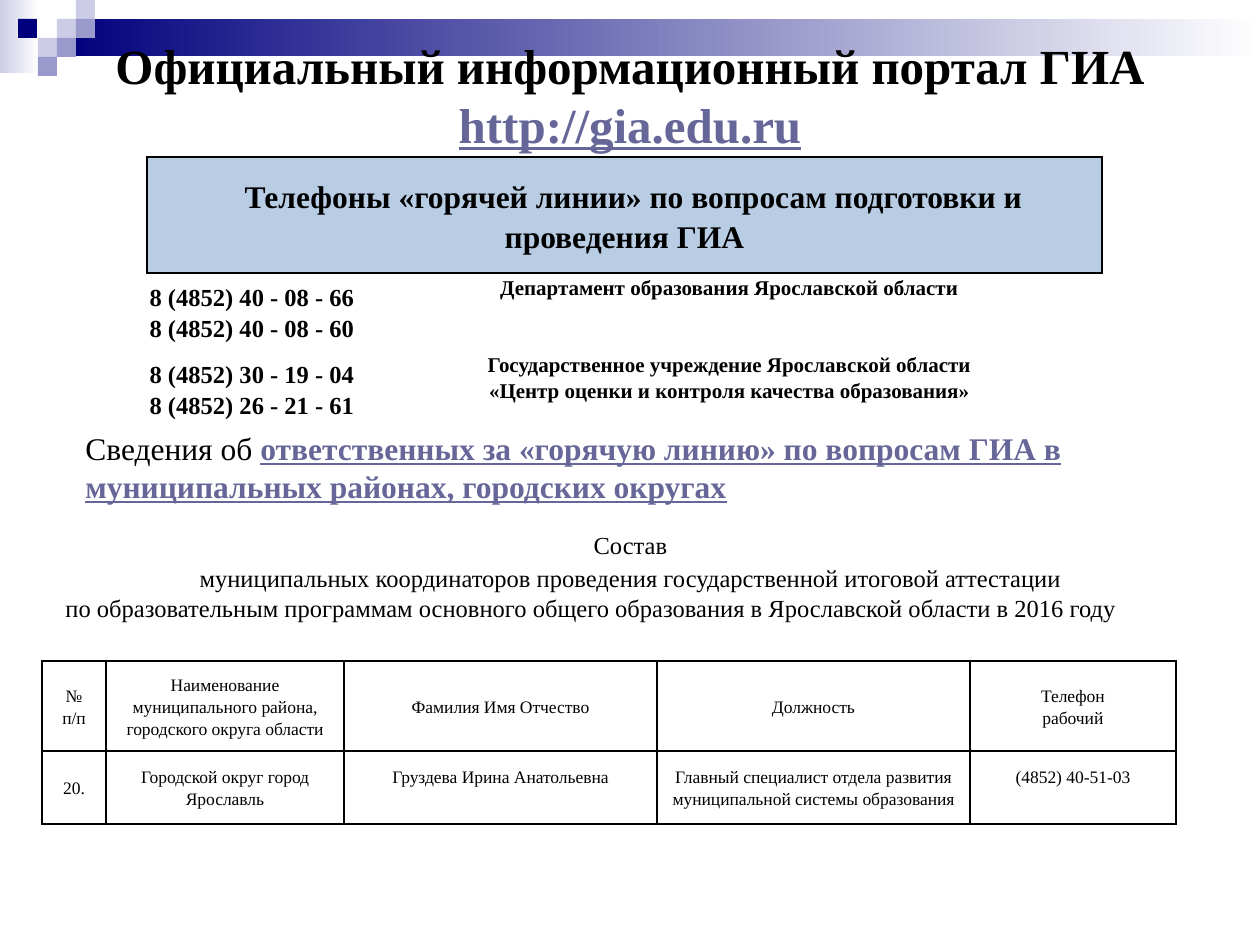
from pptx import Presentation
from pptx.dml.color import RGBColor
from pptx.enum.shapes import MSO_SHAPE
from pptx.enum.text import MSO_ANCHOR, MSO_AUTO_SIZE, PP_ALIGN
from pptx.oxml import parse_xml
from pptx.oxml.ns import nsdecls
from pptx.util import Pt

EMU_PER_PX = 914400 / 126
FONT = "Times New Roman"
COLORS = {
    "text": "000000",
    "link": "666699",
    "header": "B8CCE4",
    "navy": "00007D",
    "lilac": "CCCCE6",
    "violet": "9999CC",
    "white": "FFFFFF",
}
SIDES = ("L", "R", "T", "B")


def px(length):
    return round(length * EMU_PER_PX)


def rgb(name):
    return RGBColor.from_string(COLORS[name])


def style_font(font, size, bold=False, color="text", underline=False):
    font.name = FONT
    font.size = Pt(size)
    font.bold = bold
    font.underline = underline
    font.color.rgb = rgb(color)


def add_block(slide, left, top, width, height, start, end=None):
    block = slide.shapes.add_shape(
        MSO_SHAPE.RECTANGLE, px(left), px(top), px(width), px(height)
    )
    block.shadow.inherit = False
    block.line.fill.background()
    if end is None:
        block.fill.solid()
        block.fill.fore_color.rgb = rgb(start)
    else:
        block.fill.gradient()
        block.fill.gradient_angle = 0
        for stop, name in zip(block.fill.gradient_stops, (start, end)):
            stop.color.rgb = rgb(name)


def add_decoration(slide):
    add_block(slide, 0, 0, 39, 73, "lilac", "white")
    add_block(slide, 57, 19, 1203, 37, "navy", "white")
    for left, top, color in (
        (57, 19, "lilac"), (76, 0, "lilac"), (76, 19, "violet"), (38, 38, "lilac"),
        (18, 19, "navy"), (57, 38, "violet"), (38, 57, "violet"),
    ):
        add_block(slide, left, top, 19, 19, color)


def fill_paragraphs(frame, lines, size, bold=False, align=PP_ALIGN.CENTER, spacing=1.15):
    for index, line in enumerate(lines):
        paragraph = frame.paragraphs[0] if index == 0 else frame.add_paragraph()
        paragraph.text = line
        paragraph.alignment = align
        paragraph.line_spacing = spacing
        style_font(paragraph.font, size, bold)


def add_link_run(paragraph, text, size):
    style_font(paragraph.add_run().font, size, True, "link", True)
    paragraph.runs[-1].text = text


def format_title(title):
    title.left, title.top, title.width, title.height = px(63), px(10), px(1134), px(168)
    frame = title.text_frame
    frame.auto_size = MSO_AUTO_SIZE.NONE
    frame.vertical_anchor = MSO_ANCHOR.MIDDLE
    paragraph = frame.paragraphs[0]
    paragraph.alignment = PP_ALIGN.CENTER
    heading = paragraph.add_run()
    heading.text = "Официальный информационный портал ГИА "
    style_font(heading.font, 28, True)
    add_link_run(paragraph, "http://gia.edu.ru", 28)
    title.element.getparent().append(title.element)


def add_text(slide, left, top, width, height):
    frame = slide.shapes.add_textbox(px(left), px(top), px(width), px(height)).text_frame
    frame.word_wrap = True
    return frame


def add_grid(slide, left, top, columns, rows):
    grid = slide.shapes.add_table(
        len(rows), len(columns), px(left), px(top), px(sum(columns)), px(sum(rows))
    ).table
    grid.first_row = grid.horz_banding = False
    for column, width in zip(grid.columns, columns):
        column.width = px(width)
    for row, height in zip(grid.rows, rows):
        row.height = px(height)
    return grid


def format_cell(cell, margin, sides=SIDES, fill=None, anchor=MSO_ANCHOR.MIDDLE, top=0):
    cell.margin_left = cell.margin_right = px(margin)
    cell.margin_top, cell.margin_bottom = px(top), 0
    cell.vertical_anchor = anchor
    properties = cell._tc.get_or_add_tcPr()
    for side in SIDES:
        paint = "<a:noFill/>"
        if side in sides:
            paint = f'<a:solidFill><a:srgbClr val="{COLORS["text"]}"/></a:solidFill>'
        properties.append(
            parse_xml(f'<a:ln{side} {nsdecls("a")} w="12700">{paint}</a:ln{side}>')
        )
    if fill:
        cell.fill.solid()
        cell.fill.fore_color.rgb = rgb(fill)
    else:
        cell.fill.background()


def add_hotline(slide):
    hotline = add_grid(slide, 147, 157, (210, 745), (116, 77, 77))
    header = hotline.cell(0, 0)
    header.merge(hotline.cell(0, 1))
    for column in range(2):
        format_cell(hotline.cell(0, column), 9, fill="header")
    heading = "Телефоны «горячей линии» по вопросам подготовки и проведения ГИА"
    fill_paragraphs(header.text_frame, [heading], 18, True)
    header.text_frame.paragraphs[0]._p.get_or_add_pPr().set("indent", str(px(18)))
    contacts = (
        ("8 (4852) 40 - 08 - 66\v8 (4852) 40 - 08 - 60",
         ["Департамент образования Ярославской области"]),
        ("8 (4852) 30 - 19 - 04\v8 (4852) 26 - 21 - 61",
         ["Государственное учреждение Ярославской области",
          "«Центр оценки и контроля качества образования»"]),
    )
    for row, (phones, office) in enumerate(contacts, 1):
        sides = ("T",) if row == 1 else ()
        phone_cell, office_cell = hotline.cell(row, 0), hotline.cell(row, 1)
        format_cell(phone_cell, 0, sides)
        format_cell(office_cell, 0, sides, anchor=MSO_ANCHOR.TOP)
        fill_paragraphs(phone_cell.text_frame, [phones], 14, True)
        fill_paragraphs(office_cell.text_frame, office, 12, True)


def add_coordinators(slide):
    coordinators = add_grid(slide, 42, 661, (64, 238, 313, 313, 206), (90, 73))
    content = (
        (["№", "п/п"],
         ["Наименование", "муниципального района, городского округа области"],
         ["Фамилия Имя Отчество"], ["Должность"], ["Телефон", "рабочий"]),
        (["20."], ["Городской округ город Ярославль"], ["Груздева Ирина Анатольевна"],
         ["Главный специалист отдела развития муниципальной системы образования"],
         ["(4852) 40-51-03"]),
    )
    for row, entries in enumerate(content):
        for column, lines in enumerate(entries):
            cell = coordinators.cell(row, column)
            if row == 1 and column in (2, 4):
                format_cell(cell, 8, anchor=MSO_ANCHOR.TOP, top=14)
            else:
                format_cell(cell, 8)
            fill_paragraphs(cell.text_frame, lines, 10)


def main():
    presentation = Presentation()
    presentation.slide_width, presentation.slide_height = px(1260), px(945)
    slide = presentation.slides.add_slide(presentation.slide_layouts[5])
    add_decoration(slide)
    format_title(slide.shapes.title)
    add_hotline(slide)

    contacts = add_text(slide, 73, 423, 1124, 89).paragraphs[0]
    lead = contacts.add_run()
    lead.text = "Сведения об "
    style_font(lead.font, 18)
    add_link_run(
        contacts,
        "ответственных за «горячую линию» по вопросам ГИА в "
        "муниципальных районах, городских округах",
        18,
    )

    staff = add_text(slide, 53, 519, 1155, 111)
    fill_paragraphs(staff, [
        "Состав",
        "муниципальных координаторов проведения государственной итоговой аттестации",
        "по образовательным программам основного общего образования в "
        "Ярославской области в 2016 году",
    ], 14)
    staff.paragraphs[2].alignment = PP_ALIGN.LEFT
    staff.paragraphs[2].line_spacing = 1.0
    add_coordinators(slide)
    presentation.save("out.pptx")


if __name__ == "__main__":
    main()
